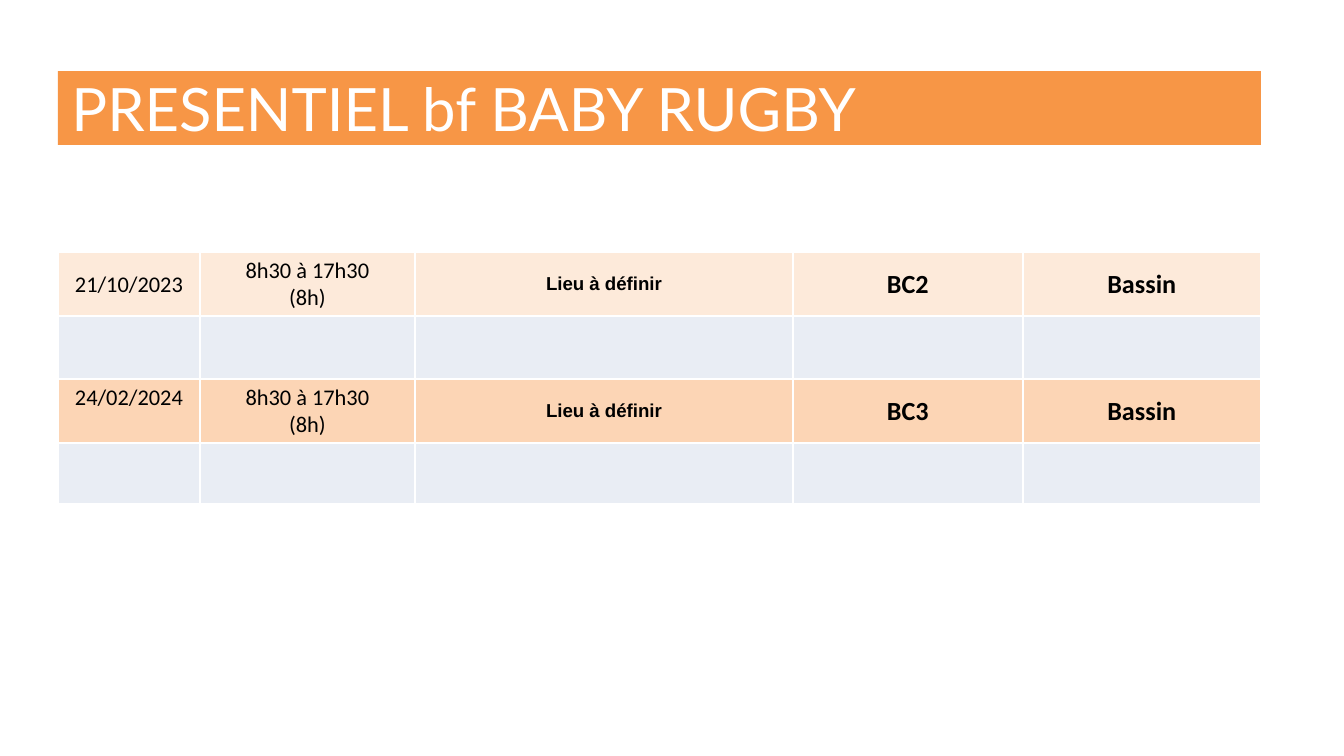
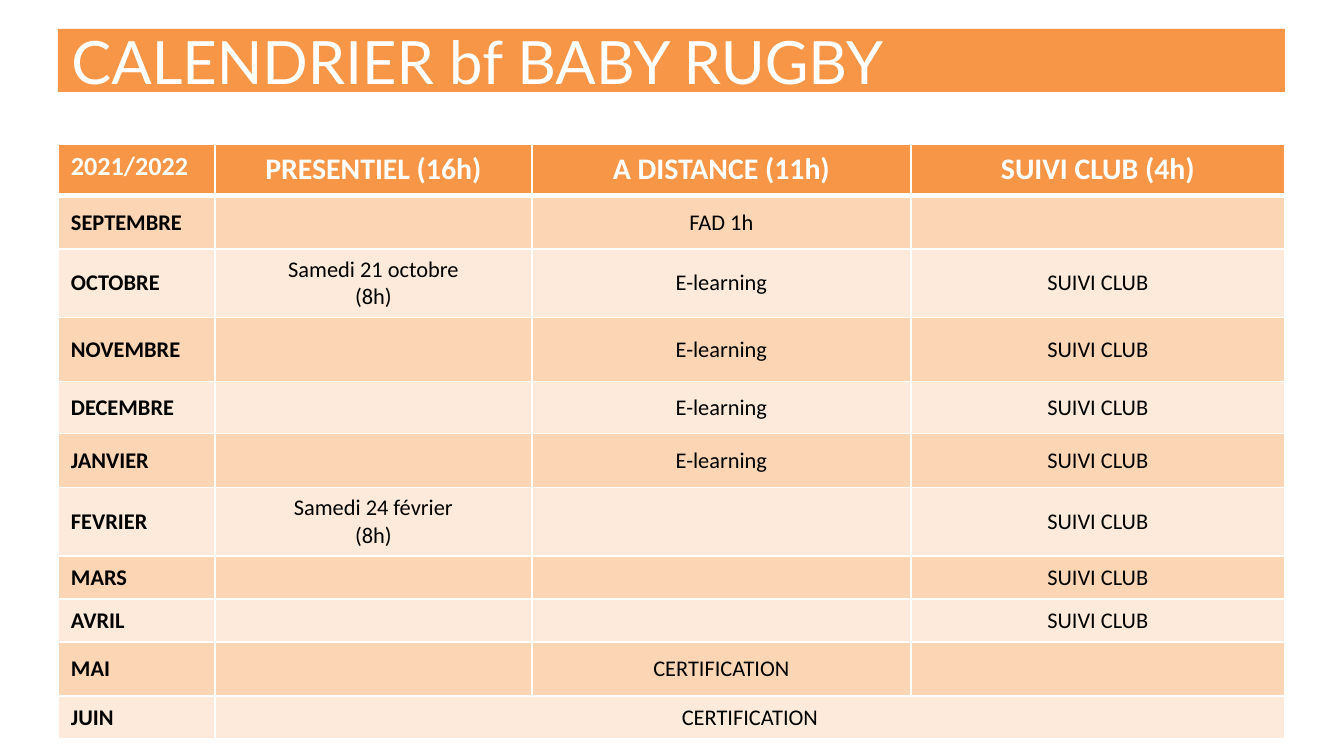
from dataclasses import dataclass, replace
from lxml import etree
from pptx import Presentation
from pptx import util as u
from pptx.dml.color import RGBColor
from pptx.enum import text
from pptx.oxml import ns

PX_PER_INCH = 134.4
LEFT = 58


@dataclass(frozen=True)
class Theme:
    white: str = "FFFFFF"
    black: str = "000000"
    orange: str = "F79646"
    peach: str = "FCD5B5"
    cream: str = "FDEADA"
    mist: str = "E9EDF4"
    title_font: str = "Lato"
    body_font: str = "Calibri"
    place_font: str = "Arial"
    title: int = 32
    heading: int = 16
    strong: int = 14
    body: int = 12
    small: int = 10
    border: int = 1
    heavy_border: int = 3


THEME = Theme()


@dataclass(frozen=True)
class Look:
    size: int = THEME.body
    bold: bool = False
    color: str = THEME.black
    font: str = THEME.body_font
    align: text.PP_ALIGN = text.PP_ALIGN.CENTER
    anchor: text.MSO_ANCHOR = text.MSO_ANCHOR.MIDDLE


@dataclass(frozen=True)
class Margins:
    left: int = 13
    top: int = 7
    right: int = 13
    bottom: int = 7


@dataclass(frozen=True)
class Row:
    height: int
    fill: str
    texts: tuple[str, ...]
    looks: tuple[Look, ...]


@dataclass(frozen=True)
class Grid:
    top: int
    widths: tuple[int, ...]
    rows: list[Row]
    margins: Margins = Margins()
    header: bool = False


@dataclass(frozen=True)
class TitleBand:
    text: str
    top: int
    width: int
    height: int


BODY = Look()
PLACE = Look(THEME.small, True, font=THEME.place_font)
CODE = Look(THEME.strong, True)
MONTH = Look(bold=True, align=text.PP_ALIGN.LEFT)
HEADING = Look(THEME.heading, True, THEME.white, anchor=text.MSO_ANCHOR.TOP)
YEAR = replace(HEADING, size=THEME.strong, align=text.PP_ALIGN.LEFT)
TITLE = Look(THEME.title, color=THEME.white, font=THEME.title_font,
             align=text.PP_ALIGN.LEFT)

SESSION_LOOKS = (BODY, BODY, PLACE, CODE, CODE)
MONTH_LOOKS = (MONTH, BODY, BODY, BODY)
BLANK = ("",) * len(SESSION_LOOKS)


def px(length: int) -> int:
    return round(length * u.Inches(1) / PX_PER_INCH)


def session(date: str, block: str) -> tuple[str, ...]:
    return (date, "8h30 à 17h30\n(8h)", "Lieu à définir", block, "Bassin")


def style_text(frame, look: Look) -> None:
    for para in frame.paragraphs:
        para.alignment = look.align
        if not para.runs:
            para._p.get_or_add_endParaRPr().set("sz", str(look.size * 100))
        for span in para.runs:
            span.font.name = look.font
            span.font.size = u.Pt(look.size)
            span.font.bold = look.bold
            span.font.color.rgb = RGBColor.from_string(look.color)


def add_border(cell, side: str, width: int) -> None:
    properties = cell._tc.get_or_add_tcPr()
    line = etree.SubElement(properties, ns.qn(f"a:ln{side}"), w=str(u.Pt(width)))
    fill = etree.SubElement(line, ns.qn("a:solidFill"))
    etree.SubElement(fill, ns.qn("a:srgbClr"), val=THEME.white)


def format_cell(cell, content: str, look: Look, fill: str, margins: Margins,
                borders: dict[str, int]) -> None:
    for side, width in borders.items():
        add_border(cell, side, width)
    cell.fill.solid()
    cell.fill.fore_color.rgb = RGBColor.from_string(fill)
    cell.margin_left, cell.margin_top = px(margins.left), px(margins.top)
    cell.margin_right, cell.margin_bottom = px(margins.right), px(margins.bottom)
    cell.vertical_anchor = look.anchor
    cell.text_frame.text = content
    style_text(cell.text_frame, look)


def add_page(deck, band: TitleBand):
    page = deck.slides.add_slide(deck.slide_layouts[5])
    box = page.shapes.title
    box.left, box.top = px(LEFT), px(band.top)
    box.width, box.height = px(band.width), px(band.height)
    box.fill.solid()
    box.fill.fore_color.rgb = RGBColor.from_string(THEME.orange)
    frame = box.text_frame
    frame.text = band.text
    frame.auto_size = text.MSO_AUTO_SIZE.NONE
    frame.word_wrap = True
    frame.vertical_anchor = TITLE.anchor
    style_text(frame, TITLE)
    return page


def add_grid(page, grid: Grid):
    height = sum(row.height for row in grid.rows)
    table = page.shapes.add_table(
        len(grid.rows), len(grid.widths), px(LEFT), px(grid.top),
        px(sum(grid.widths)), px(height)).table
    table.first_row = False
    table.horz_banding = False
    for column, width in zip(table.columns, grid.widths):
        column.width = px(width)
    for index, row in enumerate(grid.rows):
        table.rows[index].height = px(row.height)
        borders = dict.fromkeys("LRTB", THEME.border)
        if grid.header and index < 2:
            borders["B" if index == 0 else "T"] = THEME.heavy_border
        for column, (content, look) in enumerate(zip(row.texts, row.looks)):
            format_cell(table.cell(index, column), content, look, row.fill,
                        grid.margins, borders)
    return table


def add_sessions(deck) -> None:
    page = add_page(deck, TitleBand("PRESENTIEL bf BABY RUGBY", 71, 1203, 74))
    rows = [
        Row(64, THEME.cream, session("21/10/2023", "BC2"), SESSION_LOOKS),
        Row(63, THEME.mist, BLANK, SESSION_LOOKS),
        Row(64, THEME.peach, session("24/02/2024", "BC3"), SESSION_LOOKS),
        Row(61, THEME.mist, BLANK, SESSION_LOOKS),
    ]
    table = add_grid(page, Grid(252, (142, 215, 378, 230, 238), rows,
                                Margins(1, 1, 1, 0)))
    table.cell(2, 0).margin_bottom = px(28)


def add_calendar(deck) -> None:
    page = add_page(deck, TitleBand("CALENDRIER bf BABY RUGBY", 29, 1227, 63))
    online, club, exam = "E-learning", "SUIVI CLUB", "CERTIFICATION"
    months = [
        (53, "SEPTEMBRE", "", "FAD 1h", ""),
        (68, "OCTOBRE", "Samedi 21 octobre\n(8h)", online, club),
        (64, "NOVEMBRE", "", online, club),
        (52, "DECEMBRE", "", online, club),
        (54, "JANVIER", "", online, club),
        (68, "FEVRIER", "Samedi 24 février\n(8h)", "", club),
        (43, "MARS", "", "", club),
        (43, "AVRIL", "", "", club),
        (54, "MAI", "", exam, ""),
        (43, "JUIN", exam, "", ""),
    ]
    headings = ("2021/2022", "PRESENTIEL (16h)", "A DISTANCE (11h)",
                "SUIVI CLUB (4h)")
    rows = [Row(52, THEME.orange, headings, (YEAR, HEADING, HEADING, HEADING))]
    for index, (height, *texts) in enumerate(months):
        fill = THEME.cream if index % 2 else THEME.peach
        rows.append(Row(height, fill, tuple(texts), MONTH_LOOKS))
    table = add_grid(page, Grid(144, (157, 317, 379, 374), rows, header=True))
    last = len(rows) - 1
    table.cell(last, 1).merge(table.cell(last, 3))


def main() -> None:
    deck = Presentation()
    deck.slide_width, deck.slide_height = px(1344), px(756)
    add_sessions(deck)
    add_calendar(deck)
    deck.save("out.pptx")


if __name__ == "__main__":
    main()
